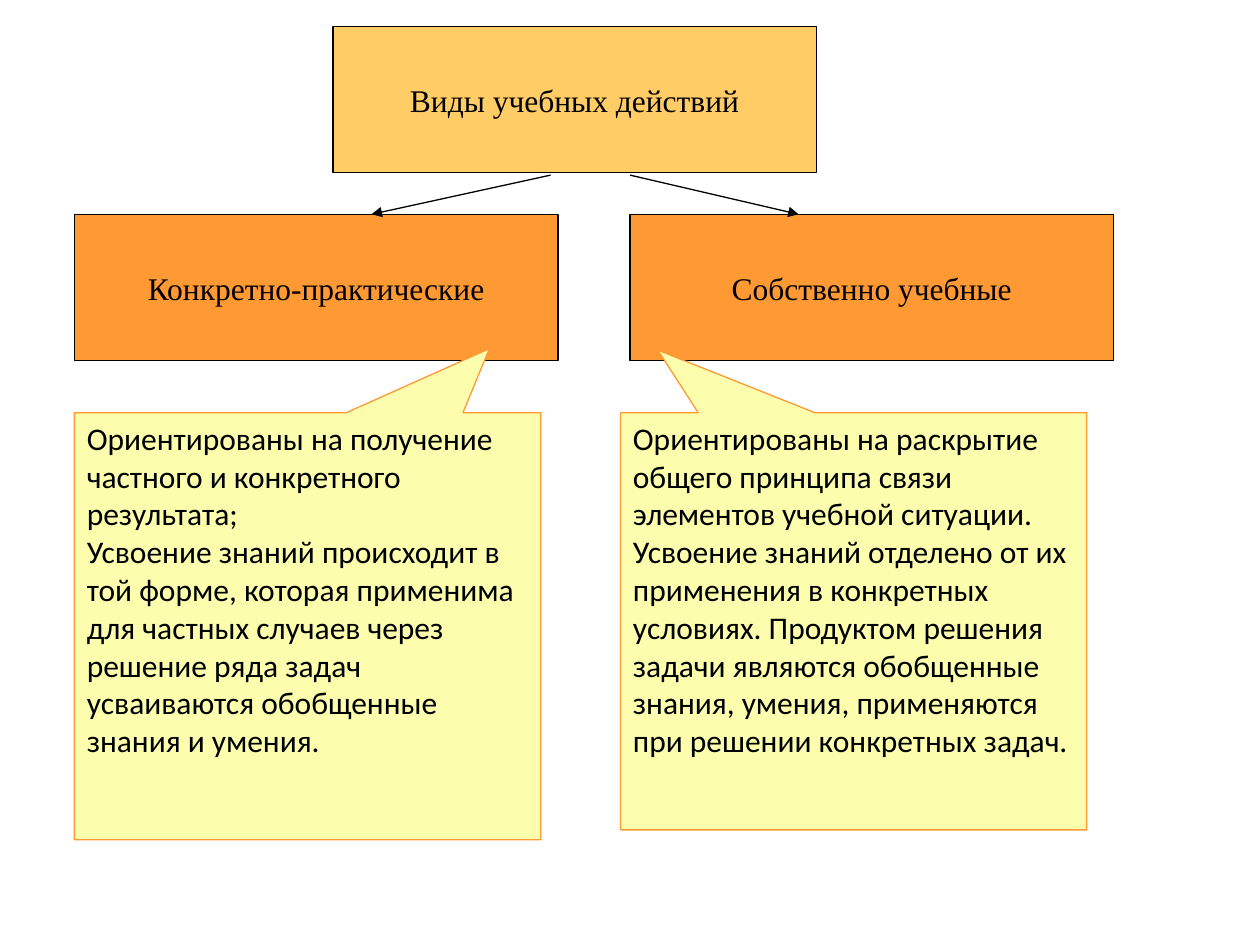
from dataclasses import dataclass
from typing import Any

from lxml.etree import SubElement
from pptx import Presentation
from pptx.dml.color import RGBColor
from pptx.enum.shapes import MSO_CONNECTOR, MSO_SHAPE
from pptx.enum.text import MSO_ANCHOR, MSO_AUTO_SIZE, PP_ALIGN
from pptx.oxml.ns import qn
from pptx.util import Cm, Pt


@dataclass(frozen=True)
class Theme:
    black: RGBColor = RGBColor(0x00, 0x00, 0x00)
    title_fill: RGBColor = RGBColor(0xFF, 0xCC, 0x66)
    orange: RGBColor = RGBColor(0xFF, 0x99, 0x33)
    note_fill: RGBColor = RGBColor(0xFC, 0xFE, 0xAE)
    box_font: str = "Times New Roman"
    note_font: str = "Calibri"
    text_size: Pt = Pt(18)
    line_width: Pt = Pt(0.75)


@dataclass(frozen=True)
class Box:
    left: float
    top: float
    text: str


@dataclass(frozen=True)
class Note:
    left: float
    height: float
    pointer: tuple[float, float]
    paragraphs: tuple[str, ...]


@dataclass(frozen=True)
class Arrow:
    start_x: float
    end_x: float


THEME = Theme()
BOX_WIDTH, BOX_HEIGHT = 9.75, 2.95
NOTE_TOP, NOTE_WIDTH = 8.32, 9.4
ARROW_TOP, ARROW_BOTTOM = 3.53, 4.32

TITLE = Box(6.71, 0.53, "Виды учебных действий")
BOXES = (
    Box(1.5, ARROW_BOTTOM, "Конкретно-практические"),
    Box(12.7, ARROW_BOTTOM, "Собственно учебные"),
)
ARROWS = (Arrow(11.1, 7.49), Arrow(12.7, 16.1))
NOTES = (
    Note(1.5, 8.61, (0.39, -0.65), (
        "Ориентированы на получение частного и конкретного результата;",
        "Усвоение знаний происходит в той форме, которая применима для частных "
        "случаев через решение ряда задач усваиваются обобщенные знания и умения.",
    )),
    Note(12.51, 8.41, (-0.42, -0.65), (
        "Ориентированы на раскрытие общего принципа связи элементов учебной ситуации.",
        "Усвоение знаний отделено от их применения в конкретных условиях. "
        "Продуктом решения задачи являются обобщенные знания, умения, "
        "применяются при решении конкретных задач.",
    )),
)


def apply_format(target: Any, values: dict[str, Any]) -> None:
    for name, value in values.items():
        setattr(target, name, value)


def paint(shape: Any, fill: RGBColor, line: RGBColor) -> None:
    shape.fill.solid()
    shape.fill.fore_color.rgb = fill
    shape.line.color.rgb = line
    shape.line.width = THEME.line_width


def write(shape: Any, paragraphs: tuple[str, ...], font: str,
          alignment: PP_ALIGN, frame_format: dict[str, Any]) -> None:
    frame = shape.text_frame
    frame.text = "\n".join(paragraphs)
    apply_format(frame, {"auto_size": MSO_AUTO_SIZE.NONE, **frame_format})
    for paragraph in frame.paragraphs:
        paragraph.alignment = alignment
        apply_format(paragraph.font, {"name": font, "size": THEME.text_size})
        paragraph.font.color.rgb = THEME.black


def format_box(shape: Any, box: Box, fill: RGBColor) -> None:
    apply_format(shape, {
        "left": Cm(box.left), "top": Cm(box.top),
        "width": Cm(BOX_WIDTH), "height": Cm(BOX_HEIGHT),
    })
    paint(shape, fill, THEME.black)
    write(shape, (box.text,), THEME.box_font, PP_ALIGN.CENTER,
          {"vertical_anchor": MSO_ANCHOR.MIDDLE, "word_wrap": False})


def add_box(slide: Any, box: Box) -> None:
    shape = slide.shapes.add_shape(
        MSO_SHAPE.RECTANGLE, Cm(box.left), Cm(box.top), Cm(BOX_WIDTH), Cm(BOX_HEIGHT))
    shape.shadow.inherit = False
    format_box(shape, box, THEME.orange)


def add_arrow(slide: Any, arrow: Arrow) -> None:
    connector = slide.shapes.add_connector(
        MSO_CONNECTOR.STRAIGHT, Cm(arrow.start_x), Cm(ARROW_TOP),
        Cm(arrow.end_x), Cm(ARROW_BOTTOM))
    connector.line.color.rgb = THEME.black
    connector.line.width = THEME.line_width
    properties = connector.element.spPr
    SubElement(properties.find(qn("a:ln")), qn("a:tailEnd"), type="triangle")
    SubElement(properties, qn("a:effectLst"))


def add_note(slide: Any, note: Note) -> None:
    shape = slide.shapes.add_shape(
        MSO_SHAPE.RECTANGULAR_CALLOUT, Cm(note.left), Cm(NOTE_TOP),
        Cm(NOTE_WIDTH), Cm(note.height))
    shape.shadow.inherit = False
    shape.adjustments[0], shape.adjustments[1] = note.pointer
    paint(shape, THEME.note_fill, THEME.orange)
    write(shape, note.paragraphs, THEME.note_font, PP_ALIGN.LEFT,
          {"vertical_anchor": MSO_ANCHOR.TOP, "word_wrap": True})


def main() -> None:
    presentation = Presentation()
    apply_format(presentation, {"slide_width": Cm(25.4), "slide_height": Cm(19.05)})
    slide = presentation.slides.add_slide(presentation.slide_layouts.get_by_name("Title Only"))
    format_box(slide.shapes.title, TITLE, THEME.title_fill)
    for box in BOXES:
        add_box(slide, box)
    for arrow in ARROWS:
        add_arrow(slide, arrow)
    for note in NOTES:
        add_note(slide, note)
    presentation.save("out.pptx")


if __name__ == "__main__":
    main()
